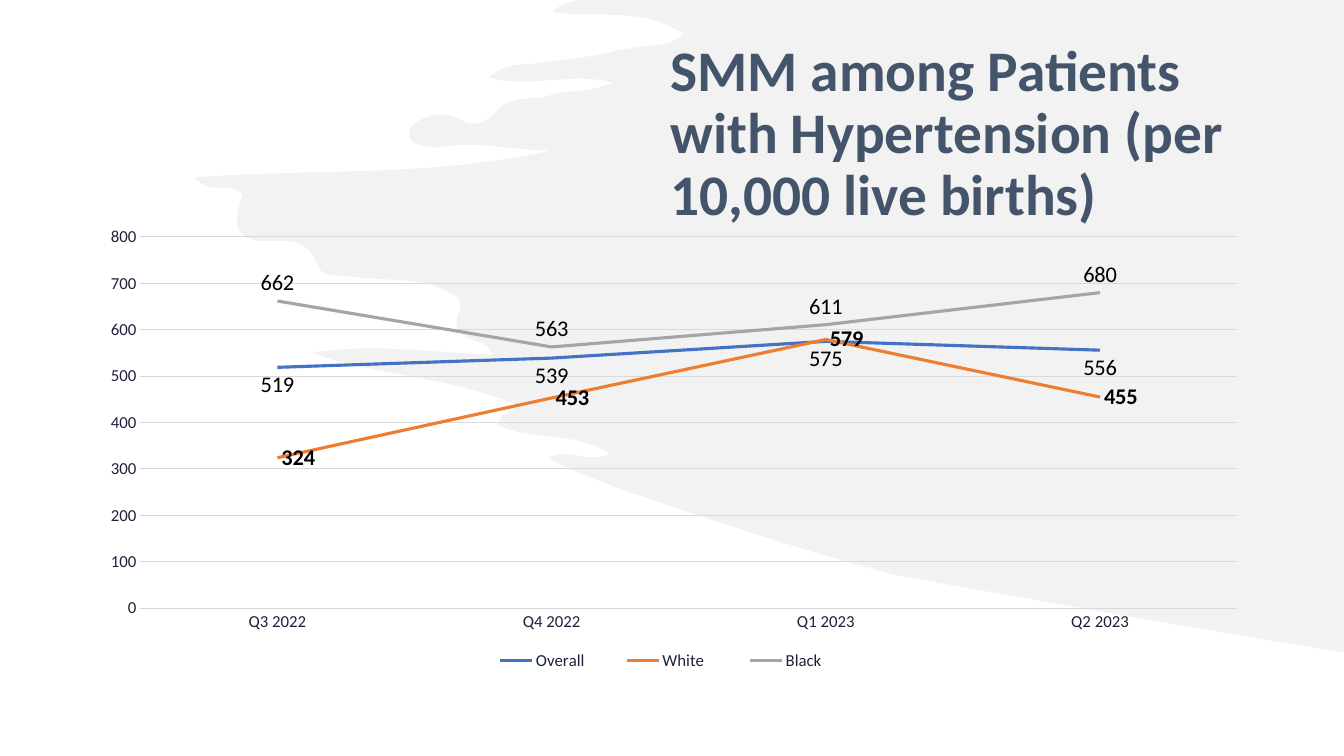
from pptx import Presentation
from pptx import util as u
from pptx.chart.data import CategoryChartData
from pptx.dml.color import RGBColor
from pptx.enum import chart as charts, text
from pptx.oxml import parse_xml
from pptx.oxml.ns import nsdecls, qn
from lxml import etree

FONT = "Calibri"
BRUSH = RGBColor(0xE7, 0xE6, 0xE6)
TITLE = RGBColor(0x44, 0x54, 0x6A)
AXIS_TEXT = RGBColor(0x1F, 0x21, 0x3A)
BLACK = RGBColor(0, 0, 0)
GRID = RGBColor(0xD9, 0xD9, 0xD9)
BLUE = RGBColor(0x44, 0x72, 0xC4)
ORANGE = RGBColor(0xED, 0x7D, 0x31)
GRAY = RGBColor(0xA5, 0xA5, 0xA5)


def style_font(font, size, color, bold=False):
    font.name = FONT
    font.size = u.Pt(size)
    font.bold = bold
    font.color.rgb = color


def manual_layout(x, y, width, height, target=""):
    """Layout of a chart part, as fractions of the chart."""
    return parse_xml(
        f'<c:layout {nsdecls("c")}><c:manualLayout>{target}'
        f'<c:xMode val="edge"/><c:yMode val="edge"/><c:x val="{x}"/><c:y val="{y}"/>'
        f'<c:w val="{width}"/><c:h val="{height}"/></c:manualLayout></c:layout>')


deck = Presentation()
deck.slide_width = u.Inches(13.33)
deck.slide_height = u.Inches(7.5)
page = deck.slides.add_slide(deck.slide_layouts[5])

# Brush stroke in the background: two control points and the end of each curve
edge_curves = [
    (5.67, 0.01, 5.57, 0.03, 5.48, 0.12), (5.95, 0.19, 6.39, 0.06, 6.78, 0.34),
    (6.64, 0.47, 6.48, 0.44, 6.32, 0.47), (6.16, 0.49, 6, 0.53, 5.84, 0.56),
    (5.67, 0.59, 5.49, 0.6, 5.32, 0.63), (5.18, 0.65, 5.02, 0.61, 4.85, 0.77),
    (5.27, 0.88, 5.66, 0.71, 6.08, 0.82), (5.84, 0.92, 5.63, 0.89, 5.44, 0.95),
    (5.27, 1, 5.06, 0.94, 4.92, 1.11), (4.81, 1.24, 4.69, 1.26, 4.55, 1.18),
    (4.42, 1.11, 4.28, 1.13, 4.15, 1.2), (4.11, 1.23, 4.06, 1.26, 4.06, 1.32),
    (4.06, 1.41, 4.12, 1.43, 4.18, 1.44), (4.24, 1.46, 4.31, 1.47, 4.37, 1.46),
    (4.74, 1.39, 5.1, 1.5, 5.47, 1.49), (4.31, 1.76, 3.14, 1.67, 1.93, 1.76),
    (2.09, 1.95, 2.29, 1.79, 2.41, 1.93), (2.3, 2.22, 2.34, 2.37, 2.58, 2.39),
    (2.8, 2.41, 3.04, 2.31, 3.16, 2.65), (3.2, 2.76, 3.41, 2.73, 3.55, 2.75),
    (3.84, 2.79, 4.14, 2.75, 4.42, 2.88), (4.53, 2.93, 4.6, 2.97, 4.55, 3.11),
    (4.49, 3.25, 4.56, 3.3, 4.66, 3.36), (4.73, 3.4, 4.83, 3.39, 4.89, 3.52),
    (4.28, 3.5, 3.69, 3.4, 3.09, 3.5), (3.75, 3.74, 4.47, 3.73, 5.12, 4.02),
    (5.1, 4.12, 4.95, 4.07, 4.94, 4.22), (5.28, 4.38, 5.69, 4.27, 6.05, 4.5),
    (5.84, 4.61, 5.65, 4.44, 5.45, 4.54), (5.52, 4.69, 8.4, 5.61, 8.92, 5.71),
    (9.78, 5.87, 11.95, 6.25, 13.18, 6.45),
]
corners = [(13.33, 0), (5.75, 0), *(curve[4:] for curve in edge_curves), (13.33, 6.47)]
units = [(round(x * 100), round(y * 100)) for x, y in corners]
builder = page.shapes.build_freeform(*units[0], scale=u.Inches(1) / 100)
builder.add_line_segments(units[1:], close=True)
brush = builder.convert_to_shape()
brush.shadow.inherit = False
brush.fill.solid()
brush.fill.fore_color.rgb = BRUSH
brush.line.fill.background()
color_element = next(brush.element.spPr.iter(qn("a:srgbClr")))
etree.SubElement(color_element, qn("a:alpha")).set("val", "50000")

# Bend the straight segments between the first and the last
left_edge = min(x for x, _ in units)
segments = list(brush.element.iter(qn("a:lnTo")))[1:-1]
for segment, curve in zip(segments, edge_curves):
    bend = etree.Element(qn("a:cubicBezTo"))
    for x, y in zip(curve[::2], curve[1::2]):
        point = etree.SubElement(bend, qn("a:pt"))
        point.set("x", str(round(x * 100) - left_edge))
        point.set("y", str(round(y * 100)))
    segment.getparent().replace(segment, bend)

# Title, in front of the brush stroke
title = page.shapes.title
title.element.addprevious(brush.element)
title.left, title.top = u.Inches(6.55), u.Inches(0.3)
title.width, title.height = u.Inches(5.86), u.Inches(2.07)
frame = title.text_frame
frame.word_wrap = True
frame.auto_size = text.MSO_AUTO_SIZE.NONE
frame.vertical_anchor = text.MSO_ANCHOR.MIDDLE
para = frame.paragraphs[0]
para.alignment = text.PP_ALIGN.LEFT
para.line_spacing = 0.9
span = para.add_run()
span.text = "SMM among Patients with Hypertension (per 10,000 live births)"
style_font(span.font, 41, TITLE, True)

# Line chart
place = charts.XL_LABEL_POSITION
groups = [
    ("Overall", (519, 539, 575, 556), BLUE, place.BELOW, False),
    ("White ", (324, 453, 579, 455), ORANGE, place.RIGHT, True),
    ("Black", (662, 563, 611, 680), GRAY, place.ABOVE, False),
]
data = CategoryChartData()
data.categories = ["Q3 2022", "Q4 2022", "Q1 2023", "Q2 2023"]
for name, values, *_ in groups:
    data.add_series(name, values)
chart = page.shapes.add_chart(
    charts.XL_CHART_TYPE.LINE, u.Inches(0.92), u.Inches(2.22),
    u.Inches(11.5), u.Inches(4.54), data).chart
style_font(chart.font, 10, BLACK)
chart.has_title = False
chart.has_legend = True
chart.legend.position = charts.XL_LEGEND_POSITION.BOTTOM
chart.legend.include_in_layout = False
style_font(chart.legend.font, 12, AXIS_TEXT)

# Lines and their value labels
chart.plots[0].vary_by_categories = False
for series, (_, _, color, position, bold) in zip(chart.plots[0].series, groups):
    series.smooth = False
    series.marker.style = charts.XL_MARKER_STYLE.NONE
    series.format.line.color.rgb = color
    series.format.line.width = u.Pt(2.25)
    labels = series.data_labels
    labels.show_value = True
    labels.position = position
    style_font(labels.font, 16, BLACK, bold)

# Axes and gridlines
for axis in (chart.category_axis, chart.value_axis):
    axis.major_tick_mark = axis.minor_tick_mark = charts.XL_TICK_MARK.NONE
    style_font(axis.tick_labels.font, 12, AXIS_TEXT)
chart.value_axis.minimum_scale = 0
chart.value_axis.maximum_scale = 800
chart.value_axis.major_unit = 100
chart.value_axis.format.line.fill.background()
chart.value_axis.has_major_gridlines = True
for line in (chart.category_axis.format.line, chart.value_axis.major_gridlines.format.line):
    line.color.rgb = GRID
    line.width = u.Pt(0.75)

# Places of the plot area and the legend
plot_area = next(chart.element.iter(qn("c:plotArea")))
legend = next(chart.element.iter(qn("c:legend")))
for part in (plot_area, legend):
    for old_layout in part.findall(qn("c:layout")):
        part.remove(old_layout)
plot_area.insert(0, manual_layout(0.041, 0.029, 0.946, 0.811, '<c:layoutTarget val="inner"/>'))
legend.find(qn("c:legendPos")).addnext(manual_layout(0.32, 0.92, 0.34, 0.07))

deck.save("out.pptx")
